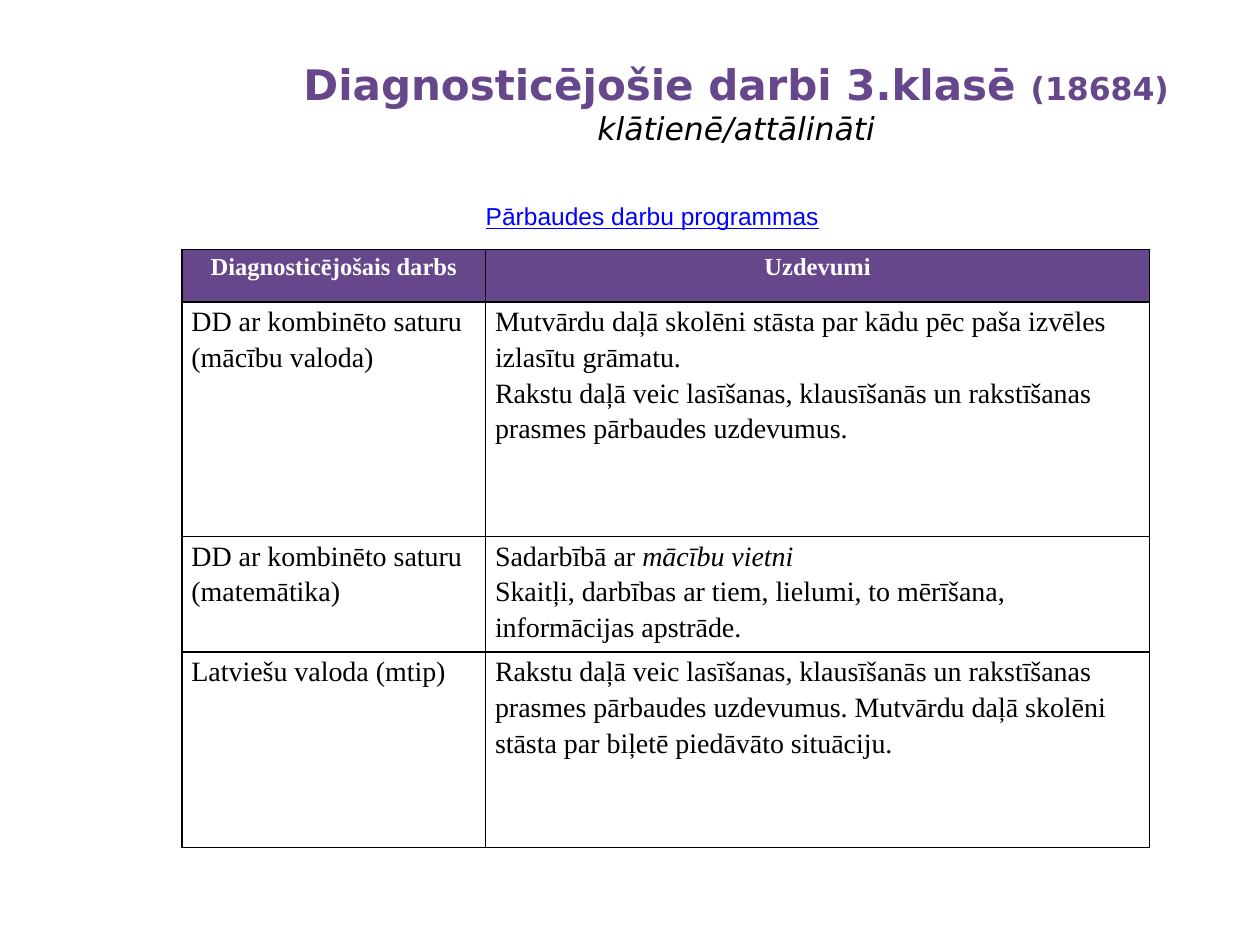
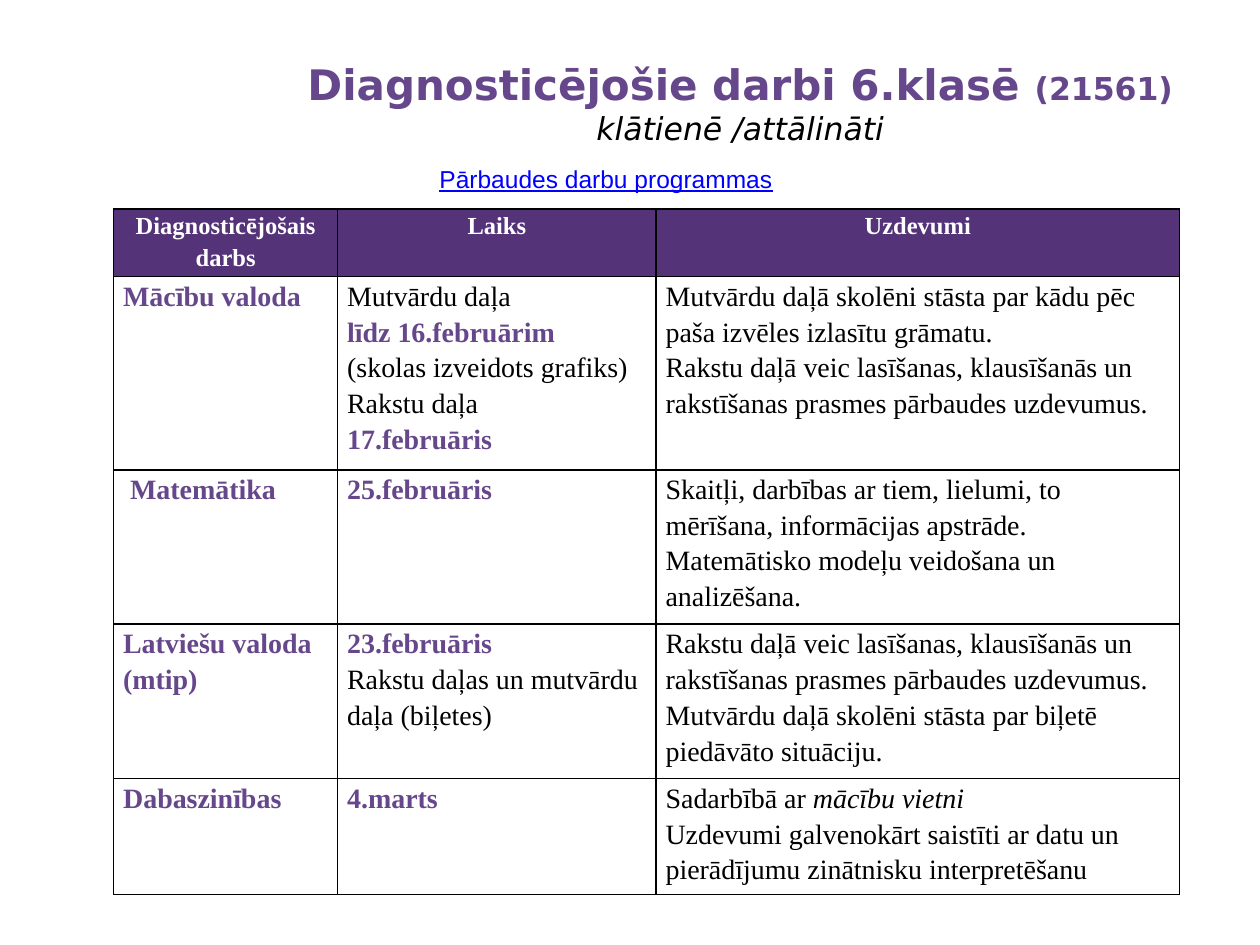
from dataclasses import dataclass

from lxml.etree import SubElement
from pptx import Presentation
from pptx.dml.color import RGBColor
from pptx.enum.text import MSO_ANCHOR, PP_ALIGN
from pptx.oxml.ns import qn
from pptx.slide import Slide
from pptx.table import _Cell
from pptx.util import Pt

PURPLE = "66478B"
DARK_PURPLE = "543378"
BLACK = "000000"
WHITE = "FFFFFF"
LINK_BLUE = "0000FF"
TITLE_FONT = "DejaVu Sans"
TABLE_FONT = "Times New Roman"
LINK_FONT = "Arial"


@dataclass(frozen=True)
class Line:
    text: str
    accent: bool = False
    italic_tail: str = ""


@dataclass(frozen=True)
class Box:
    left: float
    top: float
    width: float
    height: float


@dataclass(frozen=True)
class GradePage:
    heading: str
    pupils: str
    mode: str
    title_box: Box
    link_box: Box
    table_left: float
    table_top: float
    columns: list[float]
    row_heights: list[float]
    header_fill: str
    headers: list[str]
    rows: list[list[list[Line]]]


RETELLING = Line("Mutvārdu daļā skolēni stāsta par kādu pēc paša izvēles izlasītu grāmatu.")
WRITTEN_TEXT = "Rakstu daļā veic lasīšanas, klausīšanās un rakstīšanas prasmes pārbaudes uzdevumus."
WRITTEN = Line(WRITTEN_TEXT)
LATVIAN = Line(WRITTEN_TEXT + " Mutvārdu daļā skolēni stāsta par biļetē piedāvāto situāciju.")
PARTNER = Line("Sadarbībā ar ", italic_tail="mācību vietni")
NUMBERS = Line("Skaitļi, darbības ar tiem, lielumi, to mērīšana, informācijas apstrāde.")

GRADE_3 = GradePage(
    heading="Diagnosticējošie darbi 3.klasē ",
    pupils="(18684)",
    mode="klātienē/attālināti",
    title_box=Box(157.5, 30, 526.5, 81.5),
    link_box=Box(270.5, 111.5, 316, 25),
    table_left=104,
    table_top=142.5,
    columns=[173.5, 379.5],
    row_heights=[30, 134, 61.5, 111.5],
    header_fill=PURPLE,
    headers=["Diagnosticējošais darbs", "Uzdevumi"],
    rows=[
        [[Line("DD ar kombinēto saturu (mācību valoda)")], [RETELLING, WRITTEN]],
        [[Line("DD ar kombinēto saturu (matemātika)")], [PARTNER, NUMBERS]],
        [[Line("Latviešu valoda (mtip)")], [LATVIAN]],
    ],
)

GRADE_6 = GradePage(
    heading="Diagnosticējošie darbi 6.klasē ",
    pupils="(21561)",
    mode="klātienē /attālināti",
    title_box=Box(162, 30, 522, 60),
    link_box=Box(244, 90, 207, 24.5),
    table_left=65,
    table_top=119.5,
    columns=[128, 182, 299],
    row_heights=[35.5, 110, 81.5, 81.5, 61],
    header_fill=DARK_PURPLE,
    headers=["Diagnosticējošais darbs", "Laiks", "Uzdevumi"],
    rows=[
        [
            [Line("Mācību valoda", accent=True)],
            [
                Line("Mutvārdu daļa"),
                Line("līdz 16.februārim", accent=True),
                Line("(skolas izveidots grafiks)"),
                Line("Rakstu daļa"),
                Line("17.februāris", accent=True),
            ],
            [RETELLING, WRITTEN],
        ],
        [
            [Line(" Matemātika", accent=True)],
            [Line("25.februāris", accent=True)],
            [NUMBERS, Line("Matemātisko modeļu veidošana un analizēšana.")],
        ],
        [
            [Line("Latviešu valoda (mtip)", accent=True)],
            [
                Line("23.februāris", accent=True),
                Line("Rakstu daļas un mutvārdu daļa (biļetes)"),
            ],
            [LATVIAN],
        ],
        [
            [Line("Dabaszinības", accent=True)],
            [Line("4.marts", accent=True)],
            [
                PARTNER,
                Line("Uzdevumi galvenokārt saistīti ar datu un pierādījumu "
                     "zinātnisku interpretēšanu"),
            ],
        ],
    ],
)


def color(value: str) -> RGBColor:
    return RGBColor.from_string(value)


def set_font(font, name: str, size: float, tint: str, bold: bool = False) -> None:
    font.name = name
    font.size = Pt(size)
    font.color.rgb = color(tint)
    font.bold = bold


def add_text_frame(slide: Slide, box: Box):
    bounds = map(Pt, (box.left, box.top, box.width, box.height))
    frame = slide.shapes.add_textbox(*bounds).text_frame
    frame.word_wrap = True
    frame.vertical_anchor = MSO_ANCHOR.TOP
    return frame


def add_title(slide: Slide, page: GradePage) -> None:
    title = add_text_frame(slide, page.title_box).paragraphs[0]
    title.alignment = PP_ALIGN.CENTER
    title.font.name = TITLE_FONT
    heading = title.add_run()
    heading.text = page.heading
    set_font(heading.font, TITLE_FONT, 24, PURPLE, bold=True)
    pupils = title.add_run()
    pupils.text = page.pupils
    set_font(pupils.font, TITLE_FONT, 18, PURPLE, bold=True)
    title.add_line_break()
    mode = title.add_run()
    mode.text = page.mode
    set_font(mode.font, TITLE_FONT, 18, BLACK)
    mode.font.italic = True


def add_programme_link(slide: Slide, box: Box) -> None:
    link = add_text_frame(slide, box).paragraphs[0]
    link.text = "Pārbaudes darbu programmas"
    set_font(link.font, LINK_FONT, 14, LINK_BLUE)
    link.font.underline = True


def add_borders(cell: _Cell) -> None:
    """Draw a 1 pt black line on each side; call before setting the fill."""
    properties = cell._tc.get_or_add_tcPr()
    for side in ("a:lnL", "a:lnR", "a:lnT", "a:lnB"):
        border = SubElement(properties, qn(side), w=str(Pt(1)))
        solid = SubElement(border, qn("a:solidFill"))
        SubElement(solid, qn("a:srgbClr"), val=BLACK)


def fill_cell(cell: _Cell, lines: list[Line], header_fill: str = "") -> None:
    """Write the lines; a header_fill makes it a centred white heading."""
    cell.margin_left = cell.margin_right = Pt(5.4)
    cell.margin_top = cell.margin_bottom = Pt(0)
    add_borders(cell)
    if header_fill:
        cell.fill.solid()
        cell.fill.fore_color.rgb = color(header_fill)
    else:
        cell.fill.background()
    frame = cell.text_frame
    for index, line in enumerate(lines):
        paragraph = frame.add_paragraph() if index else frame.paragraphs[0]
        paragraph.line_spacing = 1.15
        paragraph.add_run().text = line.text
        if line.italic_tail:
            tail = paragraph.add_run()
            tail.text = line.italic_tail
            tail.font.italic = True
        if header_fill:
            paragraph.alignment = PP_ALIGN.CENTER
            set_font(paragraph.font, TABLE_FONT, 14, WHITE, bold=True)
        else:
            tint = PURPLE if line.accent else BLACK
            set_font(paragraph.font, TABLE_FONT, 16, tint, bold=line.accent)


def add_work_table(slide: Slide, page: GradePage) -> None:
    table = slide.shapes.add_table(
        len(page.row_heights), len(page.columns),
        Pt(page.table_left), Pt(page.table_top),
        Pt(sum(page.columns)), Pt(sum(page.row_heights)),
    ).table
    table.horz_banding = False
    for column, width in zip(table.columns, page.columns):
        column.width = Pt(width)
    for row, height in zip(table.rows, page.row_heights):
        row.height = Pt(height)
    for column, header in enumerate(page.headers):
        fill_cell(table.cell(0, column), [Line(header)], page.header_fill)
    for row, cells in enumerate(page.rows, start=1):
        for column, lines in enumerate(cells):
            fill_cell(table.cell(row, column), lines)


def main() -> None:
    deck = Presentation()
    deck.slide_width, deck.slide_height = Pt(720), Pt(540)
    for page in (GRADE_3, GRADE_6):
        slide = deck.slides.add_slide(deck.slide_layouts[6])
        add_title(slide, page)
        add_work_table(slide, page)
        add_programme_link(slide, page.link_box)
    deck.save("out.pptx")


if __name__ == "__main__":
    main()
